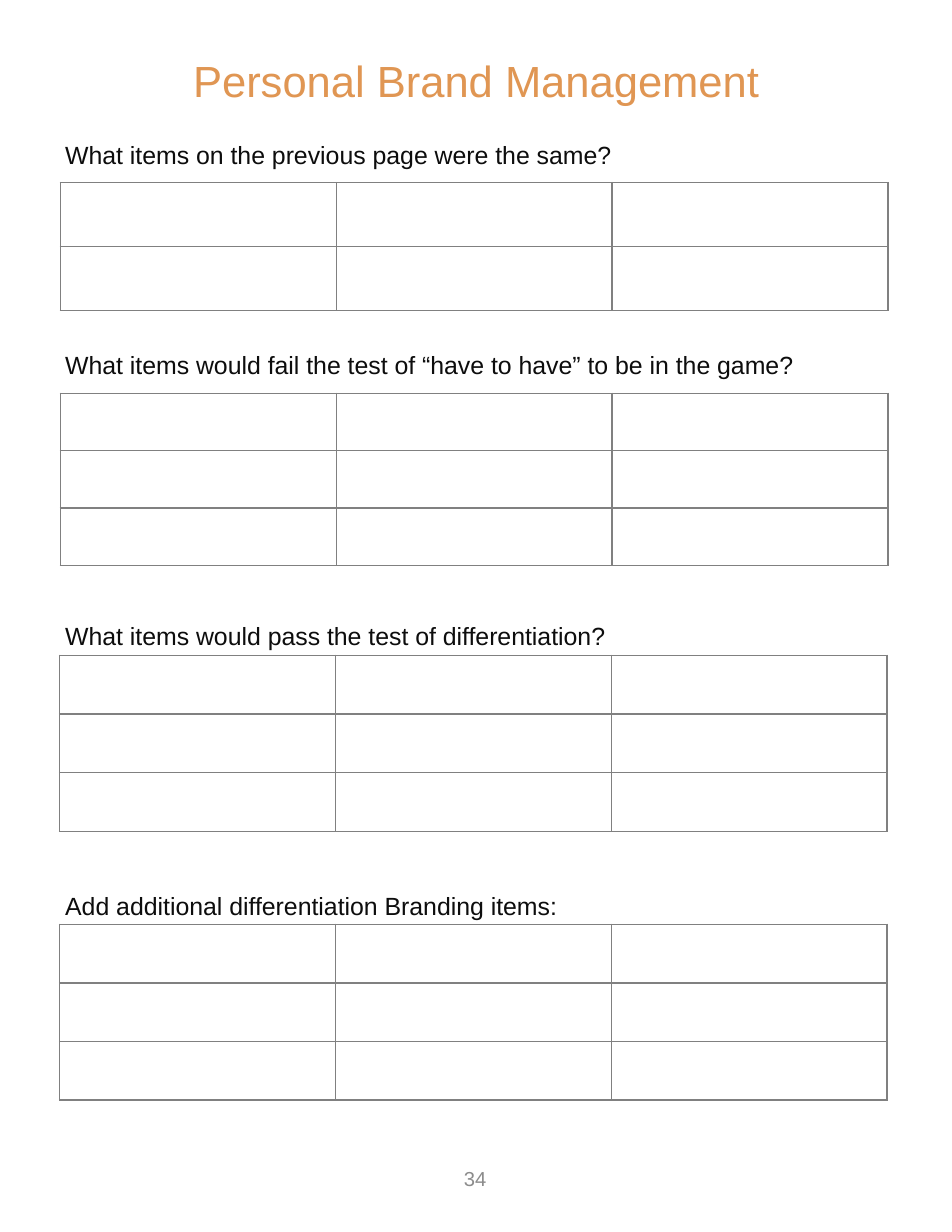
from dataclasses import dataclass

from lxml import etree
from pptx import Presentation
from pptx.dml.color import RGBColor
from pptx.enum.text import MSO_ANCHOR, PP_ALIGN
from pptx.oxml.ns import qn
from pptx.util import Cm, Pt

TOP, MIDDLE = MSO_ANCHOR.TOP, MSO_ANCHOR.MIDDLE
LEFT, CENTER = PP_ALIGN.LEFT, PP_ALIGN.CENTER


@dataclass(frozen=True)
class Theme:
    font: str = "Arial"
    title: tuple = (28, "E09653")
    body: tuple = (16, "0D0D0D")
    number: tuple = (13, "8C8C8C")
    border: str = "808080"
    line: int = Pt(1)


class Sheet:
    def __init__(self, slide, theme):
        self.slide, self.theme = slide, theme

    def text(self, box, lines, style, align=LEFT, anchor=TOP, pad=0.13, head=0.13, leading=1.0):
        """Write (text, points before) pairs as the paragraphs of one box."""
        frame = self.slide.shapes.add_textbox(*map(Cm, box)).text_frame
        layout = {
            "word_wrap": True, "vertical_anchor": anchor,
            "margin_left": Cm(pad), "margin_right": Cm(pad),
            "margin_top": Cm(head), "margin_bottom": Cm(0.13),
        }
        for name, value in layout.items():
            setattr(frame, name, value)
        size, color = style
        for i, (words, gap) in enumerate(lines):
            para = frame.add_paragraph() if i else frame.paragraphs[0]
            form = {"alignment": align, "line_spacing": leading, "space_before": Pt(gap)}
            for name, value in form.items():
                setattr(para, name, value)
            run = para.add_run()
            run.text = words
            for name, value in {"name": self.theme.font, "size": Pt(size)}.items():
                setattr(run.font, name, value)
            run.font.color.rgb = RGBColor.from_string(color)

    def border(self, cell):
        props = cell._tc.get_or_add_tcPr()
        for side in ("lnL", "lnR", "lnT", "lnB"):
            line = etree.SubElement(props, qn(f"a:{side}"), w=str(self.theme.line))
            fill = etree.SubElement(line, qn("a:solidFill"))
            etree.SubElement(fill, qn("a:srgbClr"), val=self.theme.border)

    def grid(self, left, top, rows, height, cols=3, width=18.77):
        """Draw an empty answer table; height is that of one row."""
        box = map(Cm, (left, top, width, rows * height))
        table = self.slide.shapes.add_table(rows, cols, *box).table
        for name in ("first_row", "horz_banding"):
            setattr(table, name, False)
        for cell in table.iter_cells():
            self.border(cell)
            cell.fill.background()


def main():
    deck = Presentation()
    deck.slide_width, deck.slide_height = Cm(21.59), Cm(27.94)
    theme = Theme()
    sheet = Sheet(deck.slides.add_slide(deck.slide_layouts[6]), theme)

    prompts = [
        ("What items on the previous page were the same?", 0),
        ("What items would fail the test of “have to have” to be in the game?", 116),
        ("What items would pass the test of differentiation?", 154.5),
        ("Add additional differentiation Branding items:", 154.5),
    ]
    sheet.text((1.35, 2.34, 19.58, 18.72), prompts, theme.body, head=0.83)

    grids = [
        (1.37, 4.14, 2, 1.45),
        (1.37, 8.92, 3, 1.3),
        (1.35, 14.86, 3, 1.33),
        (1.35, 20.96, 3, 1.33),
    ]
    for grid in grids:
        sheet.grid(*grid)

    sheet.text((1.12, 1.22, 19.35, 1.35), [("Personal Brand Management", 0)],
               theme.title, CENTER, MIDDLE, leading=0.9)
    sheet.text((8.26, 25.98, 5.03, 1.5), [("34", 0)],
               theme.number, CENTER, MIDDLE, pad=0.28)
    deck.save("out.pptx")


if __name__ == "__main__":
    main()
